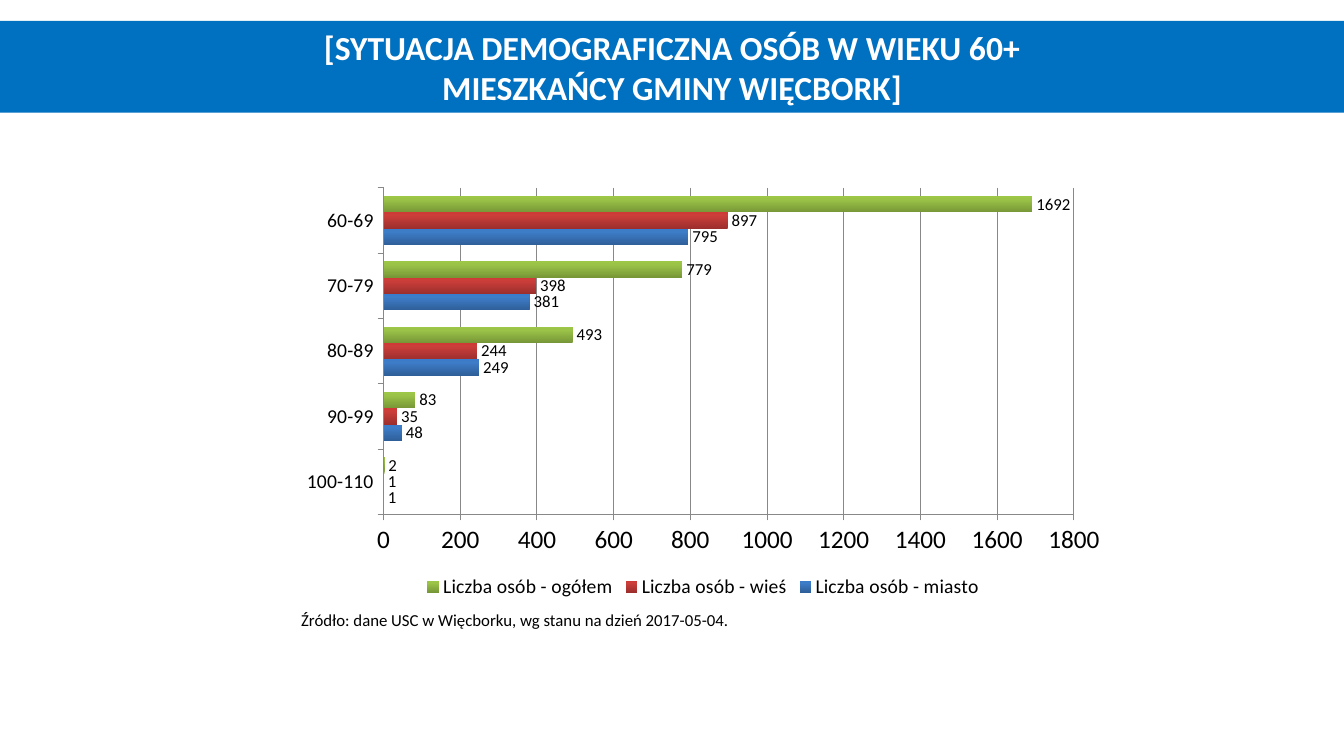
import copy
from dataclasses import dataclass

import pptx
import pptx.chart.data
import pptx.dml.color
import pptx.enum.chart
import pptx.enum.text
import pptx.util

Pt = pptx.util.Pt


@dataclass(frozen=True)
class Theme:
    font: str = "Calibri"
    banner: str = "0070C0"
    light: str = "FFFFFF"
    dark: str = "000000"
    grid: str = "888888"
    title_size: int = 24
    value_size: int = 18
    category_size: int = 14
    small_size: int = 12
    line_width: float = 0.75
    town: tuple = ("2F5F99", "3D7CC7", "3A7CCB")
    village: tuple = ("9C2F2D", "CB3E3A", "CE3B37")
    total: tuple = ("779737", "9BC348", "9DC746")


THEME = Theme()
AGE_GROUPS = ["100-110", "90-99", "80-89", "70-79", "60-69"]
SERIES = [
    ("Liczba osób - miasto", (1, 48, 249, 381, 795), THEME.town),
    ("Liczba osób - wieś", (1, 35, 244, 398, 897), THEME.village),
    ("Liczba osób - ogółem", (2, 83, 493, 779, 1692), THEME.total),
]


def rgb(value):
    return pptx.dml.color.RGBColor.from_string(value)


def style_font(font, size, color=THEME.dark, bold=False):
    font.name = THEME.font
    font.size = Pt(size)
    font.bold = bold
    font.color.rgb = rgb(color)


def style_line(line):
    line.color.rgb = rgb(THEME.grid)
    line.width = Pt(THEME.line_width)


def add_banner(slide, lines):
    banner = slide.shapes.add_shape(
        pptx.enum.shapes.MSO_SHAPE.RECTANGLE, 0, Pt(15), Pt(960), Pt(65.4))
    banner.shadow.inherit = False
    banner.fill.solid()
    banner.fill.fore_color.rgb = rgb(THEME.banner)
    banner.line.fill.background()
    banner.text_frame.text = "\n".join(lines)
    for paragraph in banner.text_frame.paragraphs:
        paragraph.alignment = pptx.enum.text.PP_ALIGN.CENTER
        style_font(paragraph.font, THEME.title_size, THEME.light, bold=True)


def add_source_note(slide, text):
    box = slide.shapes.add_textbox(Pt(208), Pt(432), Pt(340), Pt(21.8))
    box.text_frame.word_wrap = True
    paragraph = box.text_frame.paragraphs[0]
    paragraph.text = text
    style_font(paragraph.font, THEME.small_size)


def fill_gradient(fill, colors):
    fill.gradient()
    fill.gradient_angle = 90
    stop_list = fill._fill._gradFill.gsLst
    stop_list.append(copy.deepcopy(stop_list[-1]))
    for stop, position, color in zip(fill.gradient_stops, (0, 0.8, 1), colors):
        stop.position = position
        stop.color.rgb = rgb(color)


def style_axis(axis, size):
    axis.major_tick_mark = pptx.enum.chart.XL_TICK_MARK.OUTSIDE
    axis.minor_tick_mark = pptx.enum.chart.XL_TICK_MARK.NONE
    style_font(axis.tick_labels.font, size)
    style_line(axis.format.line)


def style_series(series, colors):
    fill_gradient(series.format.fill, colors)
    series.invert_if_negative = False
    labels = series.data_labels
    labels.show_value = True
    labels.position = pptx.enum.chart.XL_LABEL_POSITION.OUTSIDE_END
    style_font(labels.font, THEME.small_size)


def add_age_chart(slide):
    data = pptx.chart.data.CategoryChartData()
    data.categories = AGE_GROUPS
    for name, values, _ in SERIES:
        data.add_series(name, values)
    chart = slide.shapes.add_chart(
        pptx.enum.chart.XL_CHART_TYPE.BAR_CLUSTERED,
        Pt(207.4), Pt(128.2), Pt(589.7), Pt(302.4), data).chart
    style_font(chart.font, THEME.value_size)
    chart.has_title = False
    chart.has_legend = True
    chart.legend.position = pptx.enum.chart.XL_LEGEND_POSITION.BOTTOM
    chart.legend.include_in_layout = False
    style_font(chart.legend.font, THEME.category_size)
    style_axis(chart.category_axis, THEME.category_size)
    style_axis(chart.value_axis, THEME.value_size)
    chart.value_axis.minimum_scale = 0
    chart.value_axis.maximum_scale = 1800
    chart.value_axis.major_unit = 200
    style_line(chart.value_axis.major_gridlines.format.line)
    plot = chart.plots[0]
    plot.gap_width = 100
    plot.vary_by_categories = False
    for series, (_, _, colors) in zip(plot.series, SERIES):
        style_series(series, colors)


def main():
    presentation = pptx.Presentation()
    presentation.slide_width = Pt(960)
    presentation.slide_height = Pt(540)
    slide = presentation.slides.add_slide(presentation.slide_layouts[6])
    add_banner(slide, ["[SYTUACJA DEMOGRAFICZNA OSÓB W WIEKU 60+",
                       "MIESZKAŃCY GMINY WIĘCBORK]"])
    add_age_chart(slide)
    add_source_note(
        slide, "Źródło: dane USC w Więcborku, wg stanu na dzień 2017-05-04.")
    presentation.save("out.pptx")


if __name__ == "__main__":
    main()
